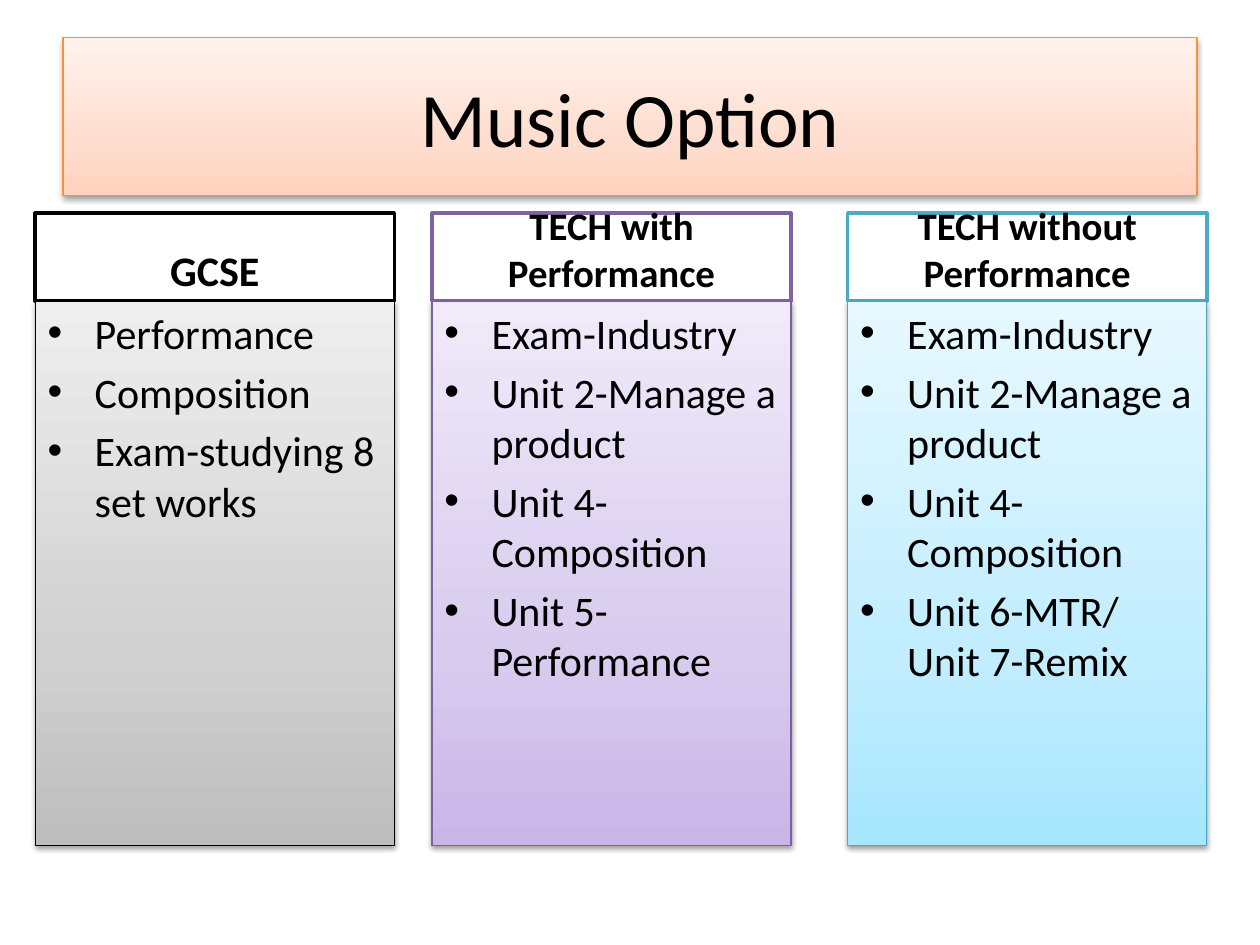
from collections import namedtuple
from copy import deepcopy
from dataclasses import dataclass

from lxml.etree import SubElement
from pptx import Presentation
from pptx.dml.color import RGBColor
from pptx.enum.shapes import MSO_SHAPE
from pptx.enum.text import MSO_ANCHOR, PP_ALIGN
from pptx.oxml.ns import qn
from pptx.util import Cm, Pt

Box = namedtuple("Box", "left top width height")
Palette = namedtuple("Palette", "header_line line stops")


@dataclass(frozen=True)
class Theme:
    font: str = "Calibri"
    text: str = "000000"
    paper: str = "FFFFFF"
    title_size: float = 44
    body_size: float = 24
    small_header_size: float = 22.2
    thin: float = 0.75
    thick: float = 2
    stop_positions: tuple = (0, 0.35, 1)
    orange: Palette = Palette("F69240", "F69240", ("FFD2BD", "FFDED0", "FFF2ED"))
    grey: Palette = Palette("000000", "000000", ("BDBDBD", "D1D1D1", "EEEEEE"))
    purple: Palette = Palette("8064A2", "7D60A0", ("C9B5E8", "D8CBEE", "F0EAF9"))
    aqua: Palette = Palette("4BACC6", "46AAC5", ("A7E6FF", "C1EDFF", "E7F8FF"))


THEME = Theme()

COLUMN_WIDTH = 7.24
COLUMN_TOP = 4.3
COLUMN_HEIGHT = 12.74
HEADER_HEIGHT = 1.77

COLUMNS = [
    (0.71, "GCSE", THEME.body_size, THEME.grey,
     ["Performance", "Composition", "Exam-studying 8 set works"]),
    (8.71, "TECH with Performance", THEME.small_header_size, THEME.purple,
     ["Exam-Industry", "Unit 2-Manage a product", "Unit 4-Composition",
      "Unit 5-Performance"]),
    (17.09, "TECH without Performance", THEME.small_header_size, THEME.aqua,
     ["Exam-Industry", "Unit 2-Manage a product", "Unit 4-Composition",
      "Unit 6-MTR/ Unit 7-Remix"]),
]


def add_box(s, box, line, width):
    sp = s.shapes.add_shape(MSO_SHAPE.RECTANGLE, *(Cm(v) for v in box))
    sp.line.color.rgb = RGBColor.from_string(line)
    sp.line.width = Pt(width)
    sp.shadow.inherit = False
    return sp


def fill_gradient(sp, colors):
    """Fill with three stops running from the bottom edge to the top."""
    sp.fill.gradient()
    sp.fill.gradient_angle = 90
    stop_list = sp._element.spPr.find(qn("a:gradFill")).find(qn("a:gsLst"))
    stop_list.append(deepcopy(stop_list[-1]))
    for stop, position, color in zip(sp.fill.gradient_stops,
                                     THEME.stop_positions, colors):
        stop.position = position
        stop.color.rgb = RGBColor.from_string(color)


def add_shadow(sp):
    effects = sp._element.spPr.find(qn("a:effectLst"))
    shadow = SubElement(effects, qn("a:outerShdw"), blurRad=str(Pt(3.1)),
                        dist=str(Pt(1.6)), dir="5400000", rotWithShape="0")
    color = SubElement(shadow, qn("a:srgbClr"), val="000000")
    SubElement(color, qn("a:alpha"), val="38000")


def add_panel(s, box, palette):
    sp = add_box(s, box, palette.line, THEME.thin)
    fill_gradient(sp, palette.stops)
    add_shadow(sp)
    return sp


def add_bullet(p):
    pPr = p._p.get_or_add_pPr()
    pPr.set("marL", str(Cm(0.95)))
    pPr.set("indent", str(-Cm(0.95)))
    SubElement(pPr, qn("a:buFont"), typeface="Arial")
    SubElement(pPr, qn("a:buChar"), char="•")


def write(sp, lines, size, bold=False, align=PP_ALIGN.LEFT,
          anchor=MSO_ANCHOR.TOP, before=0, bullet=False):
    tf = sp.text_frame
    tf.word_wrap = True
    tf.vertical_anchor = anchor
    for i, line in enumerate(lines):
        p = tf.add_paragraph() if i else tf.paragraphs[0]
        p.alignment = align
        p.space_before = Pt(before)
        if bullet:
            add_bullet(p)
        r = p.add_run()
        r.text = line
        r.font.name = THEME.font
        r.font.size = Pt(size)
        r.font.bold = bold
        r.font.color.rgb = RGBColor.from_string(THEME.text)


def add_title(s, box, text):
    write(add_panel(s, box, THEME.orange), [text], THEME.title_size,
          align=PP_ALIGN.CENTER, anchor=MSO_ANCHOR.MIDDLE)


def add_column(s, box, header, header_size, palette, items):
    """Place a header with a bulleted panel directly below it."""
    sp = add_box(s, box._replace(height=HEADER_HEIGHT),
                 palette.header_line, THEME.thick)
    sp.fill.solid()
    sp.fill.fore_color.rgb = RGBColor.from_string(THEME.paper)
    write(sp, [header], header_size, bold=True, align=PP_ALIGN.CENTER,
          anchor=MSO_ANCHOR.BOTTOM, before=header_size * 0.2)

    panel = box._replace(top=box.top + HEADER_HEIGHT,
                         height=box.height - HEADER_HEIGHT)
    write(add_panel(s, panel, palette), items, THEME.body_size,
          before=THEME.body_size * 0.2, bullet=True)


def main():
    prs = Presentation()
    prs.slide_width, prs.slide_height = Cm(25.4), Cm(19.05)
    s = prs.slides.add_slide(prs.slide_layouts[6])
    add_title(s, Box(1.27, 0.76, 22.86, 3.18), "Music Option")
    for left, *content in COLUMNS:
        box = Box(left, COLUMN_TOP, COLUMN_WIDTH, COLUMN_HEIGHT)
        add_column(s, box, *content)
    prs.save("out.pptx")


if __name__ == "__main__":
    main()
